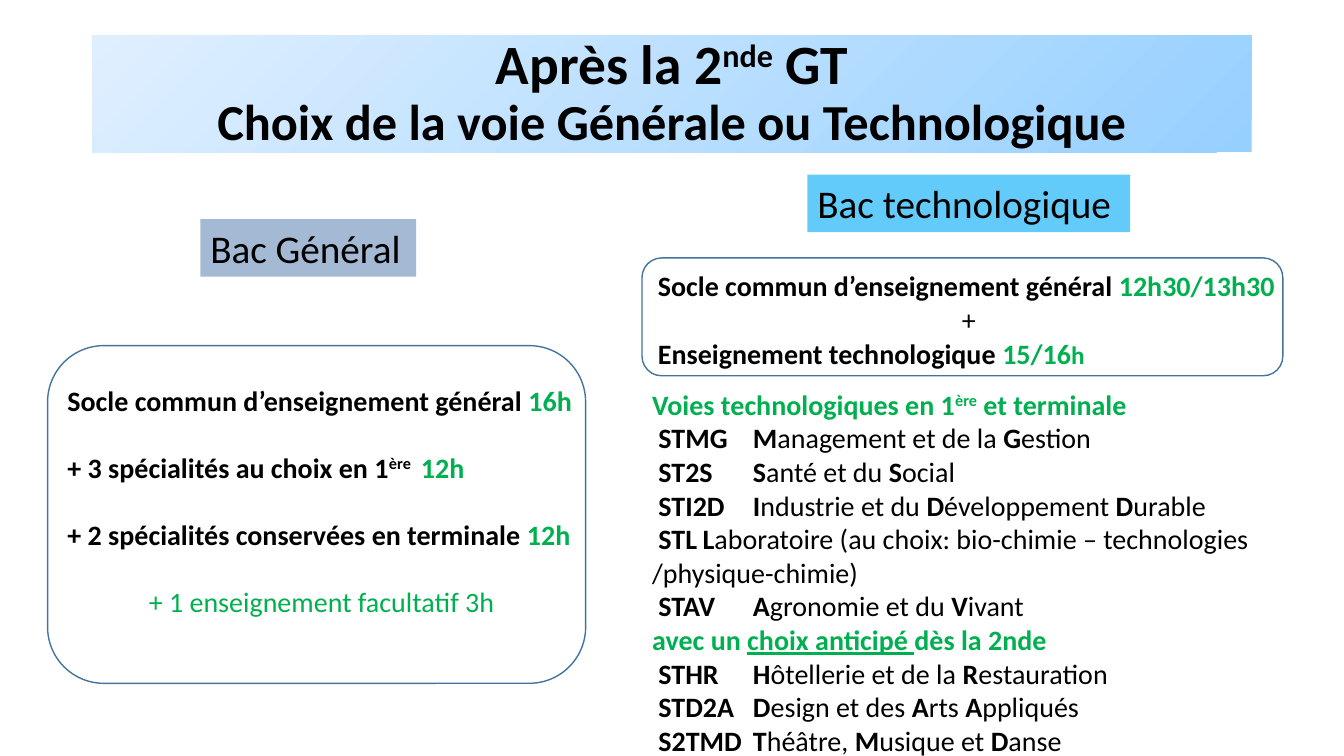
from dataclasses import dataclass
from typing import Optional

import lxml.etree
import pptx
import pptx.dml.color
import pptx.enum.shapes
import pptx.enum.text
import pptx.oxml.ns
import pptx.util
from pptx.util import Cm, Pt

RGBColor = pptx.dml.color.RGBColor
Align = pptx.enum.text.PP_ALIGN

BLACK = RGBColor(0x00, 0x00, 0x00)
GREEN = RGBColor(0x00, 0xB0, 0x50)
FRAME_BLUE = RGBColor(0x43, 0x73, 0x9E)
GENERAL_BLUE = RGBColor(0xA4, 0xBA, 0xD4)
TECHNO_BLUE = RGBColor(0x62, 0xCB, 0xFA)
TITLE_DARK = RGBColor(0x96, 0xD0, 0xFF)
TITLE_LIGHT = RGBColor(0xE0, 0xEF, 0xFF)
FONT = "Calibri"


@dataclass
class Box:
    """Left, top, width and height in centimetres."""
    left: float
    top: float
    width: float
    height: float

    def lengths(self) -> tuple:
        return Cm(self.left), Cm(self.top), Cm(self.width), Cm(self.height)


@dataclass
class Span:
    text: str
    bold: Optional[bool] = None
    color: Optional[RGBColor] = None
    size: Optional[float] = None
    raised: bool = False
    underline: Optional[bool] = None


@dataclass
class Line:
    spans: list[Span]
    bold: bool = True
    color: RGBColor = BLACK
    size: float = 20
    align: Align = Align.LEFT
    gap: float = 0


@dataclass
class Track:
    """A technological track; asterisks enclose the bold letters of its name."""
    code: str
    name: str

    def line(self) -> Line:
        letters = [Span(part, bold=i % 2 == 1)
                   for i, part in enumerate(self.name.split("*")) if part]
        return Line([Span(self.code + "\t", bold=True), *letters], bold=False)


@dataclass
class Label:
    text: str
    box: Box
    color: RGBColor


def write_spans(paragraph, line: Line) -> None:
    paragraph.alignment = line.align
    paragraph.space_before = Pt(line.gap)
    paragraph.font.name = FONT
    paragraph.font.size = Pt(line.size)
    paragraph.font.bold = line.bold
    paragraph.font.color.rgb = line.color
    for span in line.spans:
        if span.text == "\n":
            paragraph.add_line_break()
            continue
        run = paragraph.add_run()
        run.text = span.text
        run.font.name = FONT
        run.font.size = Pt(span.size or line.size)
        run.font.bold = line.bold if span.bold is None else span.bold
        run.font.underline = span.underline
        run.font.color.rgb = span.color or line.color
        if span.raised:
            run.font._element.set("baseline", "30000")


def write_lines(frame, lines: list[Line], wrap: bool = True) -> None:
    frame.word_wrap = wrap
    frame.auto_size = pptx.enum.text.MSO_AUTO_SIZE.NONE
    for i, line in enumerate(lines):
        write_spans(frame.add_paragraph() if i else frame.paragraphs[0], line)


def place(shape, box: Box) -> None:
    shape.left, shape.top, shape.width, shape.height = box.lengths()


def add_text(slide, box: Box, lines: list[Line], wrap: bool = True):
    text = slide.shapes.add_textbox(*box.lengths())
    write_lines(text.text_frame, lines, wrap)
    return text


def add_frame(slide, box: Box) -> None:
    frame = slide.shapes.add_shape(
        pptx.enum.shapes.MSO_SHAPE.ROUNDED_RECTANGLE, *box.lengths())
    frame.shadow.inherit = False
    frame.fill.background()
    frame.line.color.rgb = FRAME_BLUE
    frame.line.width = Pt(1)


def set_list_layout(paragraph, indent: float, tab: float) -> None:
    """Remove the bullet, indent the first line and align the names on a tab."""
    properties = paragraph._p.get_or_add_pPr()
    properties.set("marL", "0")
    properties.set("indent", str(Cm(indent)))
    qn = pptx.oxml.ns.qn
    no_bullet = lxml.etree.Element(qn("a:buNone"))
    tabs = lxml.etree.Element(qn("a:tabLst"))
    lxml.etree.SubElement(tabs, qn("a:tab"), pos=str(Cm(tab)), algn="l")
    default_font = properties.find(qn("a:defRPr"))
    default_font.addprevious(no_bullet)
    default_font.addprevious(tabs)


TITLE = Line([Span("Après la 2"), Span("nde", raised=True), Span(" GT"), Span("\n"),
              Span("Choix de la voie Générale ou Technologique", size=36)],
             size=39.6, align=Align.CENTER)

LABELS = [
    Label("Bac Général", Box(5.05, 5.52, 5.44, 1.45), GENERAL_BLUE),
    Label("Bac technologique", Box(20.35, 4.4, 8.13, 1.45), TECHNO_BLUE),
]

FRAMES = [Box(1.2, 8.71, 13.56, 8.51), Box(16.18, 6.5, 16.15, 2.97)]

GENERAL = [
    Line([Span("Socle commun d’enseignement général "), Span("16h", color=GREEN)]),
    Line([Span("+ 3 spécialités au choix en 1"), Span("ère ", raised=True),
          Span(" 12h", color=GREEN)], gap=24),
    Line([Span("+ 2 spécialités conservées en terminale "),
          Span("12h", color=GREEN)], gap=24),
    Line([Span("+ 1 enseignement facultatif 3h")],
         bold=False, color=GREEN, align=Align.CENTER, gap=24),
]

TECHNO_HOURS = [
    Line([Span("Socle commun d’enseignement général "), Span("12h30/13h30", color=GREEN)]),
    Line([Span("+")], bold=False, align=Align.CENTER),
    Line([Span("Enseignement technologique "), Span("15/16", color=GREEN),
          Span("h", color=GREEN, size=18)]),
]

OPEN_HEADING = Line([Span("Voies technologiques en 1"), Span("ère", raised=True),
                     Span(" et terminale")], color=GREEN)
OPEN_TRACKS = [
    Track("STMG", "*M*anagement et de la *G*estion"),
    Track("ST2S", "*S*anté et du *S*ocial"),
    Track("STI2D", "*I*ndustrie et du *D*éveloppement *D*urable"),
    Track("STL", "*L*aboratoire (au choix: bio-chimie – technologies /physique-chimie)"),
    Track("STAV", "*A*gronomie et du *V*ivant"),
]
EARLY_HEADING = Line([Span("avec un "), Span("choix anticipé ", underline=True),
                      Span("dès la 2nde")], color=GREEN)
EARLY_TRACKS = [
    Track("STHR", "*H*ôtellerie et de la *R*estauration"),
    Track("STD2A", "*D*esign et des *A*rts *A*ppliqués"),
    Track("S2TMD", "*T*héâtre, *M*usique et *D*anse"),
]


def main() -> None:
    deck = pptx.Presentation()
    deck.slide_width, deck.slide_height = Cm(33.87), Cm(19.05)
    slide = deck.slides.add_slide(deck.slide_layouts[1])
    title, tracks = slide.placeholders

    # Title band
    place(title, Box(2.33, 0.89, 29.21, 2.95))
    title.fill.gradient()
    title.fill.gradient_angle = 135
    for stop, color in zip(title.fill.gradient_stops, (TITLE_DARK, TITLE_LIGHT)):
        stop.color.rgb = color
    write_lines(title.text_frame, [TITLE])
    title.text_frame.vertical_anchor = pptx.enum.text.MSO_ANCHOR.MIDDLE
    title.text_frame.paragraphs[0].line_spacing = 0.9

    # List of technological tracks
    place(tracks, Box(16.18, 9.63, 17.86, 9.65))
    headings = (OPEN_HEADING, EARLY_HEADING)
    lines = [OPEN_HEADING, *(track.line() for track in OPEN_TRACKS),
             EARLY_HEADING, *(track.line() for track in EARLY_TRACKS)]
    write_lines(tracks.text_frame, lines)
    for paragraph, line in zip(tracks.text_frame.paragraphs, lines):
        set_list_layout(paragraph, indent=0 if line in headings else 0.16, tab=2.5)

    # Hours of both routes, with their frames
    add_text(slide, Box(1.45, 9.53, 13.31, 8.81), GENERAL)
    for box in FRAMES:
        add_frame(slide, box)
    add_text(slide, Box(16.33, 6.65, 16.18, 2.82), TECHNO_HOURS, wrap=False)

    # Route labels
    for label in LABELS:
        text = add_text(slide, label.box, [Line([Span(label.text)], bold=False, size=28)])
        text.fill.solid()
        text.fill.fore_color.rgb = label.color

    deck.save("out.pptx")


if __name__ == "__main__":
    main()
